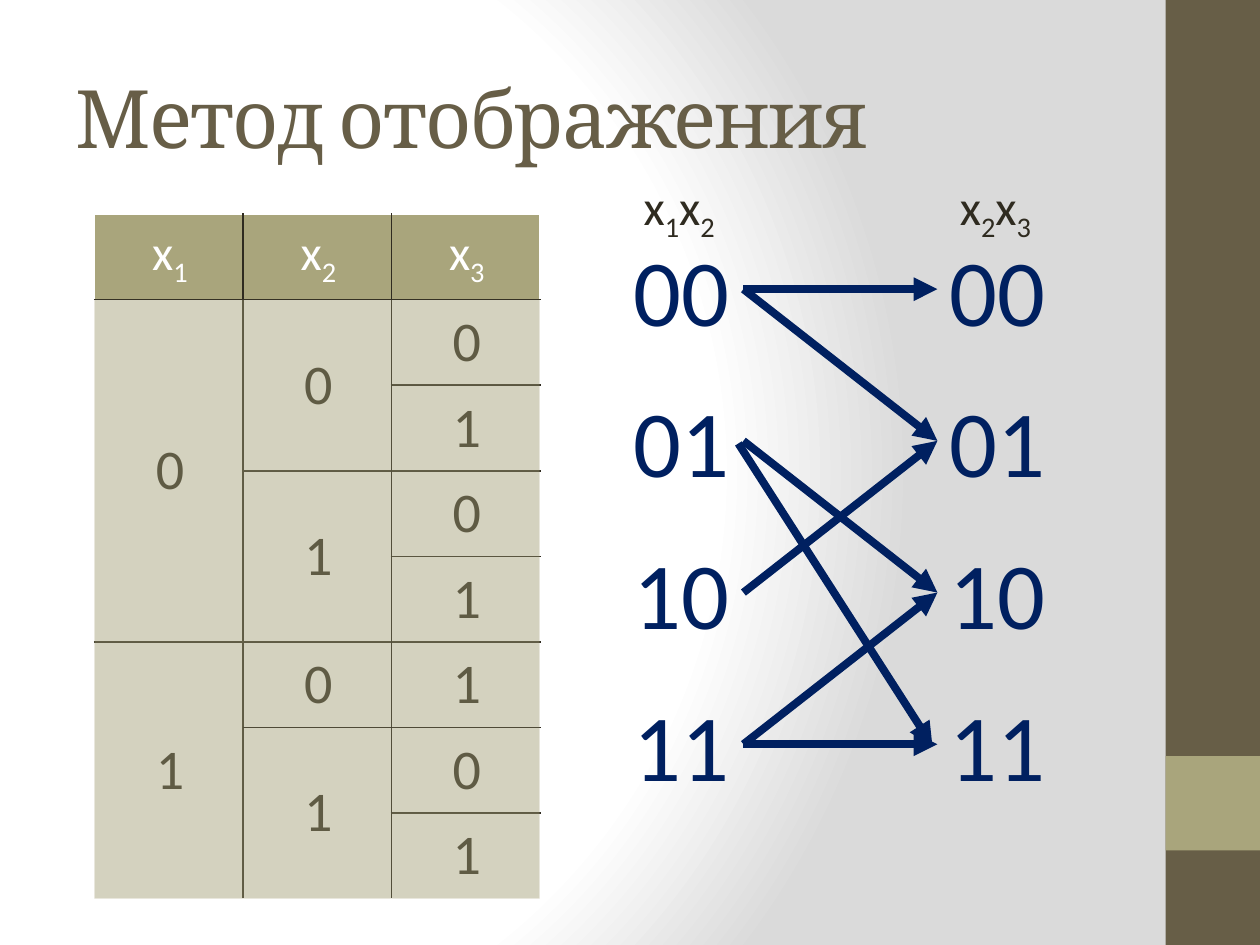
from lxml import etree
from pptx import Presentation
from pptx import util as u
from pptx.dml.color import RGBColor
from pptx.enum import shapes, text
from pptx.oxml import parse_xml
from pptx.oxml.ns import nsdecls, qn

Inches = u.Inches
COLORS = {
    "brown": "675E47", "olive": "A9A57C", "ink": "2F2B20",
    "navy": "002060", "white": "FFFFFF", "cell": "F1F0EC", "gray": "DADADA",
}

# Table: (row, column, rows spanned, value)
TABLE_LEFT, TABLE_TOP, COLUMN_WIDTH, ROW_HEIGHT = 0.75, 1.7, 1.178, 0.679
ROWS, COLUMNS = 8, 3
HEADERS = ["x1", "x2", "x3"]
VALUES = [
    (1, 0, 4, "0"), (5, 0, 3, "1"),
    (1, 1, 2, "0"), (3, 1, 2, "1"), (5, 1, 1, "0"), (6, 1, 2, "1"),
] + [(row, 2, 1, value) for row, value in enumerate("0101101", start=1)]

# Mapping diagram
CODES = ["00", "01", "10", "11"]
LEFT_X, RIGHT_X, CODE_TOP, CODE_STEP = 4.93, 7.44, 1.79, 1.204
JOINED_ARROWS = [("00", "00"), ("00", "01"), ("01", "10"),
                 ("10", "01"), ("11", "10"), ("11", "11")]


def rgb(name):
    return RGBColor.from_string(COLORS[name])


def set_format(target, values):
    for name, value in values.items():
        setattr(target, name, value)


def add_run(paragraph, content, size, color, font="Calibri"):
    run = paragraph.add_run()
    run.text = content
    set_format(run.font, {"size": u.Pt(size), "name": font})
    run.font.color.rgb = rgb(color)
    return run


def add_indexed(paragraph, content, size, color):
    """Write variables such as x1x2 with their digits as subscripts."""
    for character in content:
        run = add_run(paragraph, character, size, color)
        if character.isdigit():
            run.font._element.set("baseline", "-25000")


def set_background(slide):
    slide.background.fill.gradient()
    gradient = slide._element.find(".//" + qn("a:gradFill"))
    stops = "".join(
        f'<a:gs pos="{position}"><a:srgbClr val="{COLORS[name]}"/></a:gs>'
        for position, name in [(0, "white"), (75000, "white"), (100000, "gray")])
    gradient.getparent().replace(gradient, parse_xml(
        f'<a:gradFill {nsdecls("a")} rotWithShape="1"><a:gsLst>{stops}</a:gsLst>'
        '<a:path path="circle"><a:fillToRect l="20000" t="50000" r="100000" b="50000"/>'
        '</a:path></a:gradFill>'))


def add_rectangle(slide, left, top, width, height, color, opacity=None):
    shape = slide.shapes.add_shape(
        shapes.MSO_SHAPE.RECTANGLE,
        Inches(left), Inches(top), Inches(width), Inches(height))
    shape.shadow.inherit = False
    shape.fill.solid()
    shape.fill.fore_color.rgb = rgb(color)
    shape.line.fill.background()
    if opacity is not None:
        color_element = shape._element.spPr.find(".//" + qn("a:srgbClr"))
        etree.SubElement(color_element, qn("a:alpha")).set("val", str(opacity * 1000))


def set_title(slide, content):
    title = slide.shapes.title
    set_format(title, {"left": Inches(0.5), "top": Inches(0.3),
                       "width": Inches(8.33), "height": Inches(1.25)})
    set_format(title.text_frame, {"vertical_anchor": text.MSO_ANCHOR.MIDDLE,
                                  "word_wrap": True})
    paragraph = title.text_frame.paragraphs[0]
    paragraph.alignment = text.PP_ALIGN.LEFT
    run = add_run(paragraph, content, 46, "brown", "Cambria")
    run.font._element.set("spc", "-100")


def set_borders(cell, row, column, span):
    """Inner edges are dark, outer edges white."""
    outer = {"L": column == 0, "R": column == COLUMNS - 1,
             "T": row == 0, "B": row + span == ROWS}
    properties = cell._tc.get_or_add_tcPr()
    for index, (side, is_outer) in enumerate(outer.items()):
        color = COLORS["white" if is_outer else "ink"]
        properties.insert(index, parse_xml(
            f'<a:ln{side} {nsdecls("a")} w="12700"><a:solidFill>'
            f'<a:srgbClr val="{color}"/></a:solidFill></a:ln{side}>'))


def fill_cell(table, row, column, span, content, size, color):
    cell = table.cell(row, column)
    if span > 1:
        cell.merge(table.cell(row + span - 1, column))
    paragraph = cell.text_frame.paragraphs[0]
    set_format(paragraph, {"alignment": text.PP_ALIGN.CENTER,
                           "space_before": u.Pt(6), "space_after": u.Pt(6)})
    paragraph._p.get_or_add_pPr().set("indent", str(Inches(0.02)))
    if row == 0:
        add_indexed(paragraph, content, size, color)
    else:
        add_run(paragraph, content, size, color)
    set_borders(cell, row, column, span)


def add_truth_table(slide):
    table = slide.shapes.add_table(
        ROWS, COLUMNS, Inches(TABLE_LEFT), Inches(TABLE_TOP),
        Inches(COLUMNS * COLUMN_WIDTH), Inches(ROWS * ROW_HEIGHT)).table
    set_format(table, {"first_row": False, "horz_banding": False})
    for row in range(ROWS):
        for column in range(COLUMNS):
            cell = table.cell(row, column)
            cell.fill.solid()
            cell.fill.fore_color.rgb = rgb("cell" if row else "olive")
            set_format(cell, {
                "margin_left": Inches(0.07), "margin_right": Inches(0.07),
                "margin_top": 0, "margin_bottom": 0,
                "vertical_anchor": text.MSO_ANCHOR.MIDDLE})
    for column, header in enumerate(HEADERS):
        fill_cell(table, 0, column, 1, header, 28, "white")
    for row, column, span, value in VALUES:
        fill_cell(table, row, column, span, value, 32, "ink")


def add_cell_covers(slide):
    for row, column, span, _ in VALUES:
        add_rectangle(slide, TABLE_LEFT + column * COLUMN_WIDTH,
                      TABLE_TOP + row * ROW_HEIGHT,
                      COLUMN_WIDTH, span * ROW_HEIGHT, "olive", opacity=40)


def add_label(slide, left, top, width, height):
    box = slide.shapes.add_textbox(
        Inches(left), Inches(top), Inches(width), Inches(height))
    set_format(box.text_frame, {
        "word_wrap": False, "auto_size": text.MSO_AUTO_SIZE.SHAPE_TO_FIT_TEXT})
    return box, box.text_frame.paragraphs[0]


def add_code_column(slide, left, heading):
    boxes = {}
    for index, code in enumerate(CODES):
        boxes[code], paragraph = add_label(
            slide, left, CODE_TOP + index * CODE_STEP, 0.97, 1.01)
        add_run(paragraph, code, 54, "navy")
    _, paragraph = add_label(slide, left + 0.08, 1.35, 0.81, 0.57)
    add_indexed(paragraph, heading, 28, "ink")
    return boxes


def add_arrow(slide, start=(0, 0), end=(0, 0)):
    connector = slide.shapes.add_connector(
        shapes.MSO_CONNECTOR.STRAIGHT, *map(Inches, start + end))
    connector.line.color.rgb = rgb("navy")
    connector.line.width = u.Pt(4.5)
    line = connector.line._get_or_add_ln()
    etree.SubElement(line, qn("a:tailEnd")).set("type", "triangle")
    etree.SubElement(connector._element.spPr, qn("a:effectLst"))
    return connector


def main():
    presentation = Presentation()
    set_format(presentation, {"slide_width": Inches(10), "slide_height": Inches(7.5)})
    slide = presentation.slides.add_slide(presentation.slide_layouts[5])

    # Background, side band and title
    set_background(slide)
    add_rectangle(slide, 9.25, 0, 0.75, 7.5, "brown")
    add_rectangle(slide, 9.25, 6, 0.75, 0.75, "olive")
    set_title(slide, "Метод отображения")

    # Table with tinted cells
    add_truth_table(slide)
    add_cell_covers(slide)

    # Mapping between codes
    sources = add_code_column(slide, LEFT_X, "x1x2")
    targets = add_code_column(slide, RIGHT_X, "x2x3")
    for source, target in JOINED_ARROWS:
        arrow = add_arrow(slide)
        arrow.begin_connect(sources[source], 3)
        arrow.end_connect(targets[target], 1)
    add_arrow(slide, (5.86, 3.52), (7.4, 5.92))

    presentation.save("out.pptx")


if __name__ == "__main__":
    main()
